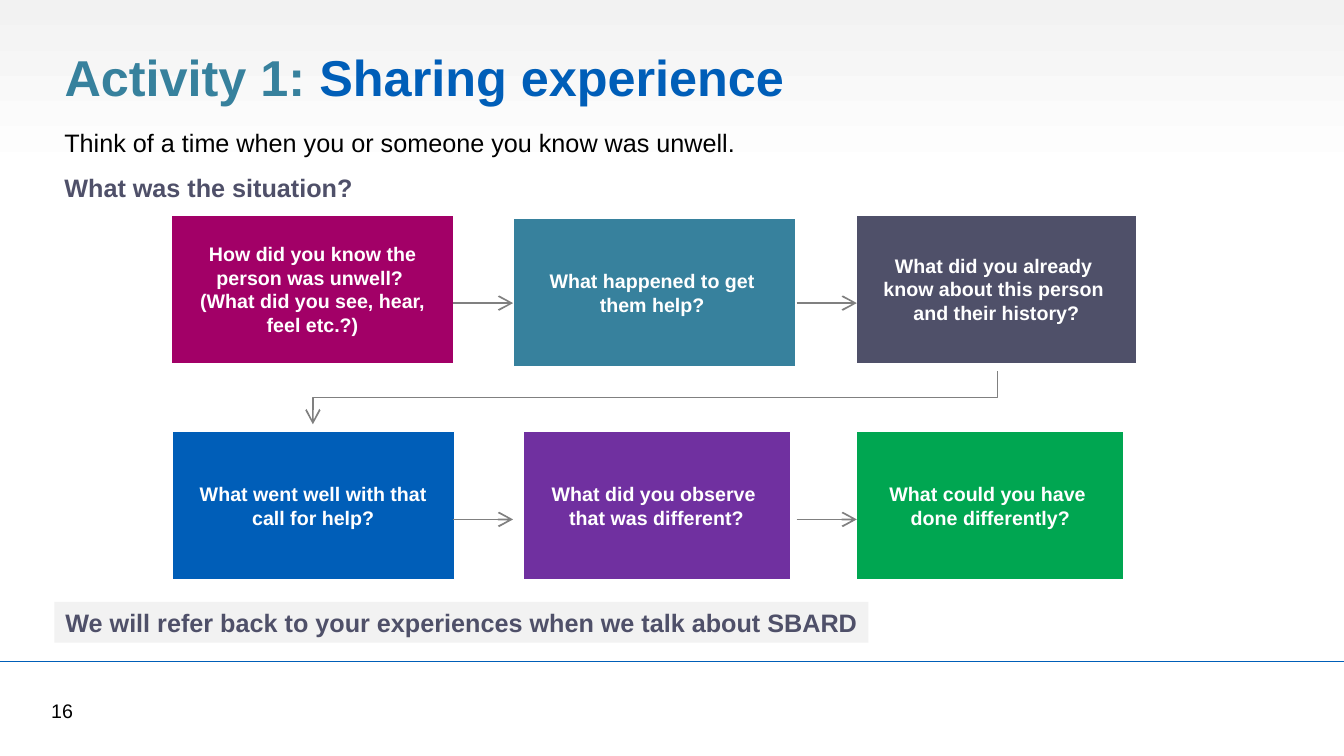
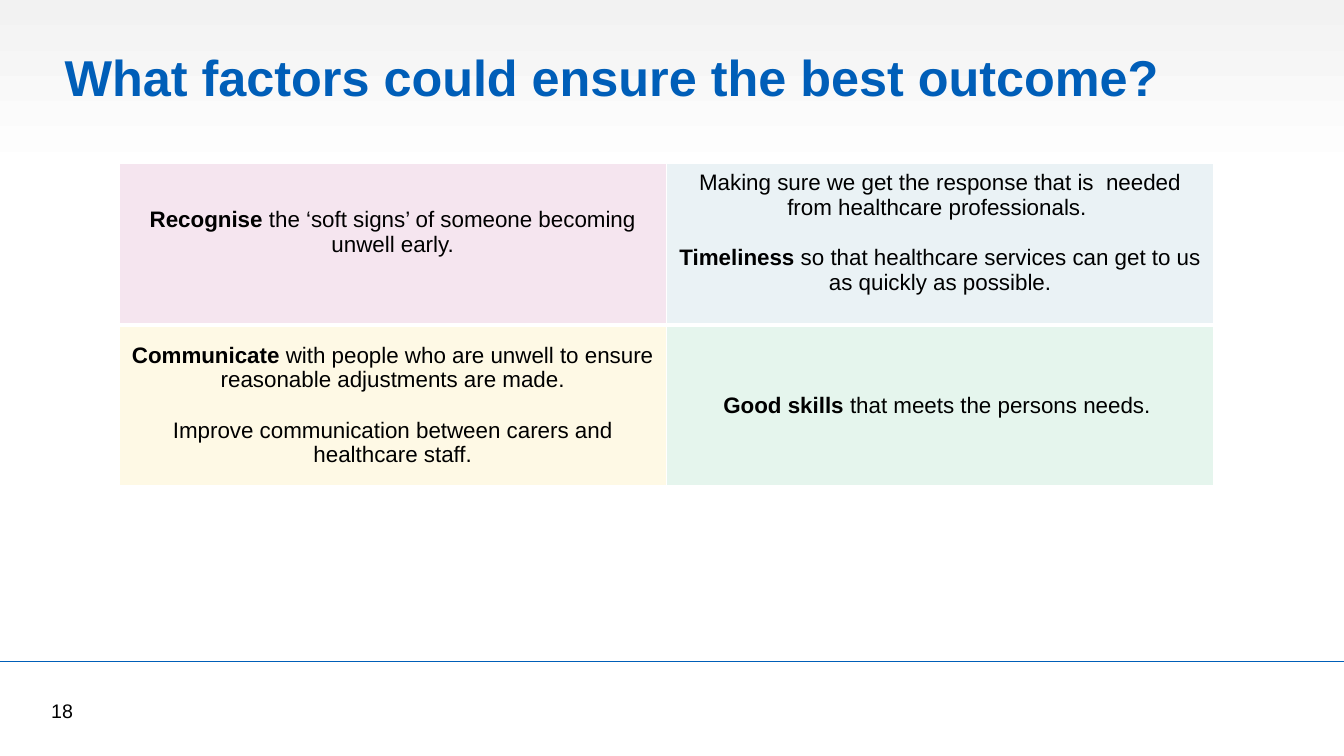
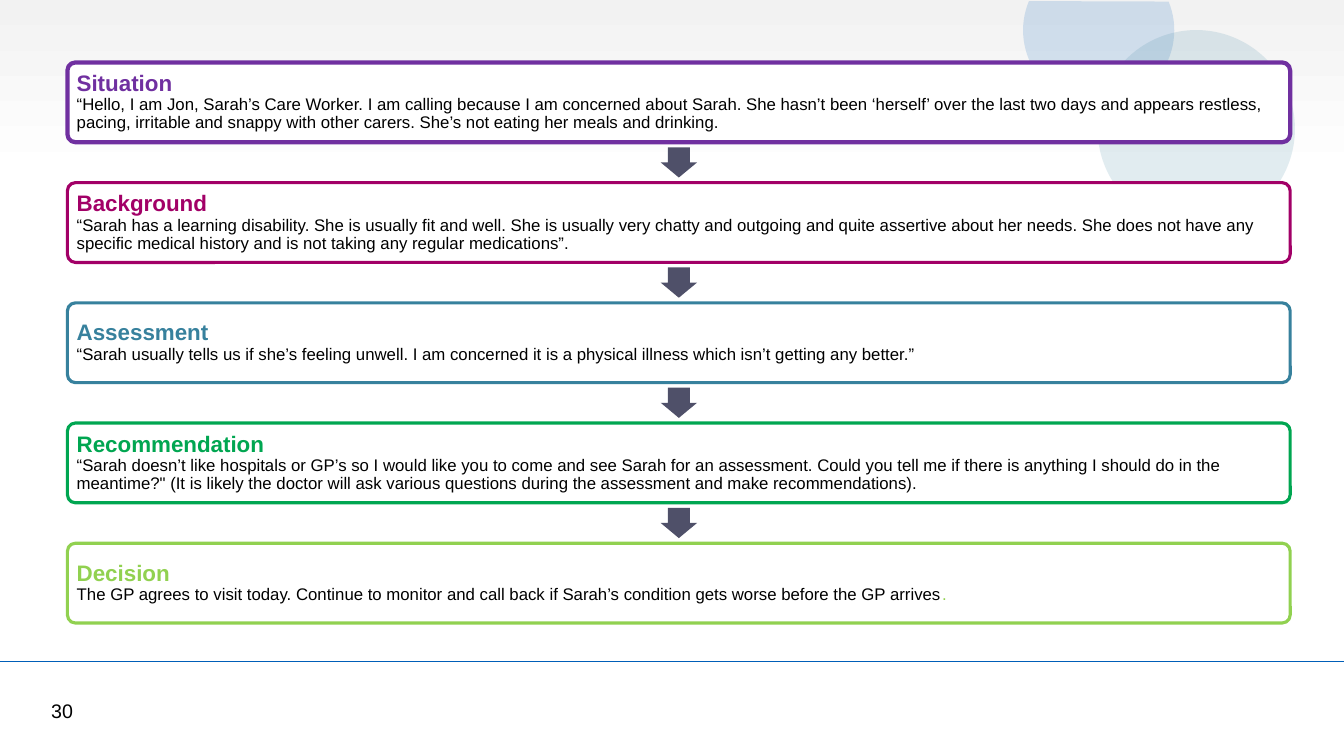
"""Build three training slides on sharing and escalating health concerns."""
from lxml import etree
from pptx import Presentation
from pptx.dml.color import RGBColor
from pptx.enum.shapes import MSO_CONNECTOR, MSO_SHAPE
from pptx.enum.text import MSO_ANCHOR, PP_ALIGN
from pptx.oxml.ns import qn
from pptx.util import Pt

RECT, ROUND, OVAL = MSO_SHAPE.RECTANGLE, MSO_SHAPE.ROUNDED_RECTANGLE, MSO_SHAPE.OVAL
CHORD, DOWN = MSO_SHAPE.CHORD, MSO_SHAPE.DOWN_ARROW
STRAIGHT, ELBOW = MSO_CONNECTOR.STRAIGHT, MSO_CONNECTOR.ELBOW
LEFT, CENTER = PP_ALIGN.LEFT, PP_ALIGN.CENTER
TOP, MIDDLE = MSO_ANCHOR.TOP, MSO_ANCHOR.MIDDLE
TITLE_ONLY, BLANK = 5, 6
WIDTH, HEIGHT = 960, 540
FONT = "Arial"
C = {
    "white": "FFFFFF", "black": "000000", "pale": "F2F2F2", "gray": "808080",
    "blue": "005EB8", "teal": "37819D", "slate": "4F5069", "plum": "A20067",
    "purple": "7030A0", "green": "00A651", "lime": "91D150", "yellow": "FACA01",
}

QUESTIONS = [
    ("plum", 122.5, 153.5, 201.6,
     "How did you know the person was unwell? \n(What did you see, hear, feel etc.?)"),
    ("teal", 367, 156, 201.6, "What happened to get \nthem help? "),
    ("slate", 611.5, 153.5, 200.5,
     "What did you already \nknow about this person \nand their history?"),
    ("blue", 123, 308, 201.6, "What went well with that call for help?"),
    ("purple", 373.5, 308, 191, "What did you observe \nthat was different?"),
    ("green", 612, 308, 191, "What could you have \ndone differently?"),
]

FACTORS = [
    [("plum", [[("Recognise ", True),
                ("the ‘soft signs’ of someone becoming unwell early.", False)]]),
     ("teal", [[("Making sure we get the response that is  needed from healthcare "
                 "professionals. ", False)],
               [("Timeliness", True),
                (" so that healthcare services can get to us as quickly as possible.", False)]])],
    [("yellow", [[("Communicate ", True),
                  ("with people who are unwell to ensure reasonable adjustments are made.", False)],
                 [("Improve communication between carers and healthcare staff.", False)]]),
     ("green", [[("Good skills ", True), ("that meets the persons needs. ", False)]])],
]

STEPS = [
    ("Situation", "purple",
     "“Hello, I am Jon, Sarah’s Care Worker. I am calling because I am concerned about Sarah. "
     "She hasn’t been ‘herself’ over the last two days and appears restless, pacing, irritable "
     "and snappy with other carers. She’s not eating her meals and drinking."),
    ("Background", "plum",
     "“Sarah has a learning disability. She is usually fit and well. She is usually very chatty "
     "and outgoing and quite assertive about her needs. She does not have any specific medical "
     "history and is not taking any regular medications”."),
    ("Assessment", "teal",
     "“Sarah usually tells us if she’s feeling unwell. I am concerned it is a physical illness "
     "which isn’t getting any better.”"),
    ("Recommendation", "green",
     "“Sarah doesn’t like hospitals or GP’s so I would like you to come and see Sarah for an "
     "assessment. Could you tell me if there is anything I should do in the meantime?\" (It is "
     "likely the doctor will ask various questions during the assessment and make "
     "recommendations)."),
    ("Decision", "lime",
     "The GP agrees to visit today. Continue to monitor and call back if Sarah’s condition gets "
     "worse before the GP arrives"),
]


def rgb(name):
    """Return the named colour."""
    return RGBColor.from_string(C[name])


def write(tf, text, size=18, color="black", bold=False, align=LEFT,
          spacing=1.0, before=0, same=False):
    """Add a formatted paragraph, or continue the last one when same is set."""
    p = tf.paragraphs[-1]
    if not same:
        if p.runs:
            p = tf.add_paragraph()
        p.alignment, p.line_spacing, p.space_before = align, spacing, Pt(before)
    for i, line in enumerate(text.split("\n")):
        if i:
            p.add_line_break()
        r = p.add_run()
        r.text = line
        r.font.name, r.font.size, r.font.bold = FONT, Pt(size), bold
        r.font.color.rgb = rgb(color)


def fade(fill, color, percent):
    """Give a fill a colour at the given opacity."""
    fill.solid()
    fill.fore_color.rgb = rgb(color)
    clr = fill._xPr.find(qn("a:solidFill"))[0]
    etree.SubElement(clr, qn("a:alpha")).set("val", str(percent * 1000))


def shape(s, kind, x, y, w, h, fill=None, line=None, weight=1):
    """Add a preset shape without a shadow and return it."""
    sp = s.shapes.add_shape(kind, Pt(x), Pt(y), Pt(w), Pt(h))
    sp.shadow.inherit = False
    if fill:
        sp.fill.solid()
        sp.fill.fore_color.rgb = rgb(fill)
    if line:
        sp.line.color.rgb = rgb(line)
        sp.line.width = Pt(weight)
    else:
        sp.line.fill.background()
    sp.text_frame.word_wrap = True
    sp.text_frame.vertical_anchor = MIDDLE
    return sp


def textbox(s, x, y, w, h):
    """Add a wrapping text box and return its text frame."""
    tf = s.shapes.add_textbox(Pt(x), Pt(y), Pt(w), Pt(h)).text_frame
    tf.word_wrap = True
    return tf


def connector(s, kind, x1, y1, x2, y2, color, weight, arrow=False):
    """Add a line without a shadow, with an open arrowhead if asked."""
    c = s.shapes.add_connector(kind, Pt(x1), Pt(y1), Pt(x2), Pt(y2))
    c.line.color.rgb = rgb(color)
    c.line.width = Pt(weight)
    sppr = c._element.spPr
    if arrow:
        head = etree.SubElement(sppr.find(qn("a:ln")), qn("a:tailEnd"))
        for key, value in (("type", "arrow"), ("w", "lg"), ("len", "lg")):
            head.set(key, value)
    etree.SubElement(sppr, qn("a:effectLst"))
    return c


def down_elbow(s, x1, y1, x2, y2):
    """Add an elbow arrow that leaves and arrives vertically, going down and left."""
    cx, cy, drop, run = (x1 + x2) / 2, (y1 + y2) / 2, y2 - y1, x1 - x2
    c = connector(s, ELBOW, cx - drop / 2, cy - run / 2, cx + drop / 2, cy + run / 2,
                  "gray", 1.25, arrow=True)
    c._element.spPr.find(qn("a:xfrm")).set("rot", "5400000")


def new_slide(prs, number, title=()):
    """Add a slide with the shared band, rule, page number and title."""
    s = prs.slides.add_slide(prs.slide_layouts[TITLE_ONLY if title else BLANK])
    band = shape(s, RECT, 0, 0, WIDTH, 126.5)
    band.fill.gradient()
    band.fill.gradient_angle = 270
    for stop, color, position in zip(band.fill.gradient_stops, ("pale", "white"), (0, 1)):
        stop.color.rgb = rgb(color)
        stop.position = position
    connector(s, STRAIGHT, 0, 472.5, WIDTH, 472.5, "blue", 1)
    write(textbox(s, 29.5, 495.5, 67, 24.5), str(number), size=14)
    if title:
        sp = s.shapes.title
        s.shapes._spTree.append(sp._element)
        sp.left, sp.top, sp.width, sp.height = Pt(38.9), Pt(34.5), Pt(832), Pt(51)
        sp.text_frame.vertical_anchor = TOP
        for i, (text, color) in enumerate(title):
            write(sp.text_frame, text, size=36, color=color, bold=True, spacing=0.9, same=i > 0)
    return s


def border(cell, side, weight):
    """Draw one white cell border."""
    ln = etree.SubElement(cell._tc.get_or_add_tcPr(), qn("a:ln" + side))
    ln.set("w", str(Pt(weight)))
    fill = etree.SubElement(ln, qn("a:solidFill"))
    etree.SubElement(fill, qn("a:srgbClr")).set("val", C["white"])


def experience_slide(prs):
    """Build the activity flow of six questions."""
    s = new_slide(prs, 16, [("Activity 1: ", "teal"), ("Sharing experience", "blue")])
    tf = textbox(s, 38.9, 76.3, 541.5, 68.5)
    write(tf, "Think of a time when you or someone you know was unwell.", spacing=1.5)
    write(tf, "What was the situation?", color="slate", bold=True, spacing=1.5)
    for color, x, y, w, text in QUESTIONS:
        sp = shape(s, RECT, x, y, w, 106, color, "white")
        write(sp.text_frame, text, size=14, color="white", bold=True, align=CENTER)
    for y in (216.5, 371):
        for x in (323.5, 569):
            connector(s, STRAIGHT, x, y, x + 43, y, "gray", 1.25, arrow=True)
    down_elbow(s, 712.5, 265, 223.5, 303)
    banner = shape(s, RECT, 38.9, 430, 581.5, 29, "pale")
    write(banner.text_frame, "We will refer back to your experiences when we talk about SBARD",
          color="slate", bold=True, align=CENTER)


def factors_slide(prs):
    """Build the two by two table of factors."""
    s = new_slide(prs, 18, [("What factors could ensure the best outcome?", "blue")])
    table = s.shapes.add_table(2, 2, Pt(85), Pt(117), Pt(782), Pt(230)).table
    table.first_row = table.horz_banding = False
    for i, row in enumerate(FACTORS):
        for j, (color, paragraphs) in enumerate(row):
            cell = table.cell(i, j)
            cell.vertical_anchor = MIDDLE
            cell.margin_left = cell.margin_right = Pt(8.6)
            cell.margin_top, cell.margin_bottom = 0, Pt(0 if i else 17)
            for side, weight in zip("LRTB", (1, 1, 3 if i else 1, 1 if i else 3)):
                border(cell, side, weight)
            fade(cell.fill, color, 10)
            for n, runs in enumerate(paragraphs):
                for k, (text, bold) in enumerate(runs):
                    write(cell.text_frame, text, size=16, bold=bold, align=CENTER,
                          before=18 if n else 0, same=k > 0)


def sbard_slide(prs):
    """Build the five step example conversation."""
    s = new_slide(prs, 30)
    chord = shape(s, CHORD, 730.8, -32.4, 108, 108)
    chord.rotation = 292.7
    fade(chord.fill, "blue", 15)
    fade(shape(s, OVAL, 784, 21.5, 141, 141).fill, "teal", 15)
    left, top, width, height, pitch = 48.2, 44.6, 873.4, 57, 85.85
    for i, (heading, color, text) in enumerate(STEPS):
        y = top + i * pitch
        card = shape(s, ROUND, left, y, width, height, "white", color, 2.25 if i else 3)
        card.adjustments[0] = 0.1
        tf = card.text_frame
        tf.margin_left = tf.margin_right = Pt(5)
        tf.margin_top = tf.margin_bottom = Pt(4)
        write(tf, heading, size=16, color=color, bold=True, spacing=0.9)
        write(tf, text, size=12, spacing=0.9)
        if i < len(STEPS) - 1:
            arrow = shape(s, DOWN, left + width / 2 - 13, y + (height + pitch) / 2 - 10.8,
                          26, 21.6, "slate")
            arrow.adjustments[0], arrow.adjustments[1] = 0.6, 0.5
        else:
            write(tf, ".", size=12, color=color, same=True)


def main():
    """Build and save the presentation."""
    prs = Presentation()
    prs.slide_width, prs.slide_height = Pt(WIDTH), Pt(HEIGHT)
    experience_slide(prs)
    factors_slide(prs)
    sbard_slide(prs)
    prs.save("out.pptx")


if __name__ == "__main__":
    main()
